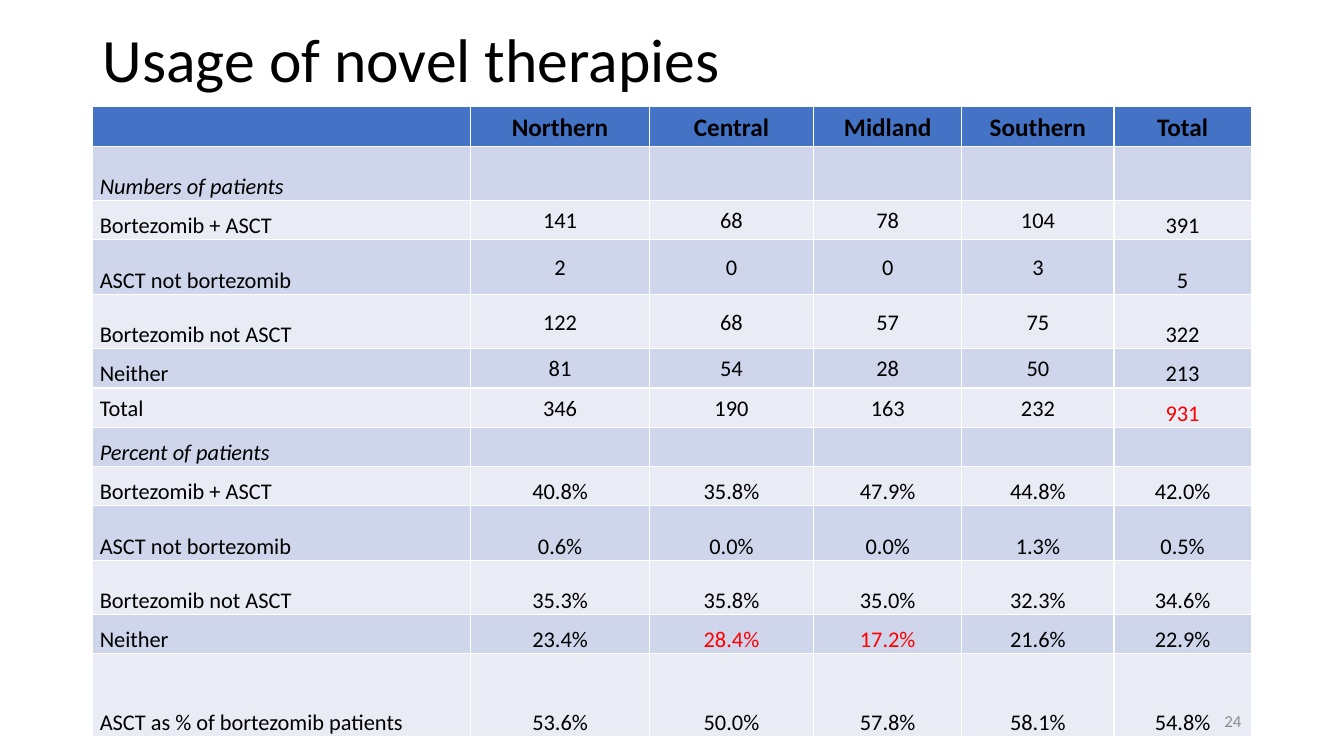
from pptx import Presentation
from pptx.dml.color import RGBColor
from pptx.enum.text import MSO_ANCHOR, MSO_AUTO_SIZE, PP_ALIGN
from pptx.util import Inches, Pt

BLACK = RGBColor(0x00, 0x00, 0x00)
RED = RGBColor(0xFF, 0x00, 0x00)
GREY = RGBColor(0x8C, 0x8C, 0x8C)
HEADER_BLUE = RGBColor(0x44, 0x72, 0xC4)
BAND_DARK = RGBColor(0xCF, 0xD5, 0xEA)
BAND_LIGHT = RGBColor(0xE9, 0xEB, 0xF5)

FONT = "Calibri"
PAGE_WIDTH, PAGE_HEIGHT = 13.33, 7.5
MARGIN = 0.92
CONTENT_WIDTH = PAGE_WIDTH - 2 * MARGIN

# Table grid: column widths and the three row heights
COLUMNS = [3.75, 1.77, 1.63, 1.47, 1.51, 1.36]
SHORT, MEDIUM, TALL = 0.39, 0.54, 0.82

REGIONS = ["", "Northern", "Central", "Midland", "Southern", "Total"]
ROWS = [
    (SHORT, REGIONS),
    (MEDIUM, ["Numbers of patients"]),
    (SHORT, ["Bortezomib + ASCT", "141", "68", "78", "104", "391"]),
    (MEDIUM, ["ASCT not bortezomib", "2", "0", "0", "3", "5"]),
    (MEDIUM, ["Bortezomib not ASCT", "122", "68", "57", "75", "322"]),
    (SHORT, ["Neither", "81", "54", "28", "50", "213"]),
    (SHORT, ["Total", "346", "190", "163", "232", "931"]),
    (SHORT, ["Percent of patients"]),
    (SHORT, ["Bortezomib + ASCT", "40.8%", "35.8%", "47.9%", "44.8%", "42.0%"]),
    (MEDIUM, ["ASCT not bortezomib", "0.6%", "0.0%", "0.0%", "1.3%", "0.5%"]),
    (MEDIUM, ["Bortezomib not ASCT", "35.3%", "35.8%", "35.0%", "32.3%", "34.6%"]),
    (SHORT, ["Neither", "23.4%", "28.4%", "17.2%", "21.6%", "22.9%"]),
    (TALL, ["ASCT as % of bortezomib patients",
            "53.6%", "50.0%", "57.8%", "58.1%", "54.8%"]),
]
HIGHLIGHTS = {"931", "28.4%", "17.2%"}


def write_text(frame, text, size, color=BLACK, bold=False, italic=False,
               align=PP_ALIGN.LEFT, line_spacing=1.0, gap=0):
    """Put one formatted paragraph into a text frame."""
    para = frame.paragraphs[0]
    para.alignment = align
    para.line_spacing = line_spacing
    para.space_before = para.space_after = Pt(gap)
    span = para.add_run()
    span.text = text
    font = span.font
    font.name, font.size, font.color.rgb = FONT, Pt(size), color
    font.bold, font.italic = bold, italic


def place(shape, left, top, width, height):
    shape.left, shape.top = Inches(left), Inches(top)
    shape.width, shape.height = Inches(width), Inches(height)


def add_title(page, text):
    title = page.shapes.title
    place(title, MARGIN, 0.08, CONTENT_WIDTH, 1.08)
    frame = title.text_frame
    frame.vertical_anchor = MSO_ANCHOR.MIDDLE
    frame.auto_size = MSO_AUTO_SIZE.NONE
    write_text(frame, text, 44, line_spacing=0.9)


def cell_anchor(values, column):
    """Headings and regional counts sit mid-cell, all else at the bottom."""
    is_count = 1 <= column <= 4 and not values[column].endswith("%")
    is_total_label = column == 0 and values[0] == "Total"
    if values is REGIONS or is_count or is_total_label:
        return MSO_ANCHOR.MIDDLE
    return MSO_ANCHOR.BOTTOM


def fill_cell(cell, row, column, values):
    header = row == 0
    cell.fill.solid()
    cell.fill.fore_color.rgb = (
        HEADER_BLUE if header else BAND_DARK if row % 2 else BAND_LIGHT)
    cell.margin_left = cell.margin_right = Inches(0.07)
    cell.margin_top = cell.margin_bottom = 0
    if column >= len(values) or not values[column]:
        return
    text = values[column]
    cell.vertical_anchor = cell_anchor(values, column)
    write_text(cell.text_frame, text, 18 if header else 16,
               color=RED if text in HIGHLIGHTS else BLACK,
               bold=header, italic=len(values) == 1,
               align=PP_ALIGN.CENTER if column else PP_ALIGN.LEFT,
               line_spacing=1.07, gap=2)


def add_therapy_table(page):
    height = sum(row_height for row_height, _ in ROWS)
    table = page.shapes.add_table(
        len(ROWS), len(COLUMNS), Inches(MARGIN), Inches(1.06),
        Inches(CONTENT_WIDTH), Inches(height)).table
    for column, width in enumerate(COLUMNS):
        table.columns[column].width = Inches(width)
    for row, (row_height, values) in enumerate(ROWS):
        table.rows[row].height = Inches(row_height)
        for column in range(len(COLUMNS)):
            fill_cell(table.cell(row, column), row, column, values)


def add_page_number(page, number):
    width = 3
    box = page.shapes.add_textbox(0, 0, 0, 0)
    place(box, PAGE_WIDTH - MARGIN - width, 6.95, width, 0.4)
    frame = box.text_frame
    frame.word_wrap = True
    frame.vertical_anchor = MSO_ANCHOR.MIDDLE
    write_text(frame, number, 12, color=GREY, align=PP_ALIGN.RIGHT)


def main():
    deck = Presentation()
    deck.slide_width, deck.slide_height = Inches(PAGE_WIDTH), Inches(PAGE_HEIGHT)
    page = deck.slides.add_slide(deck.slide_layouts.get_by_name("Title Only"))
    add_title(page, "Usage of novel therapies")
    add_therapy_table(page)
    add_page_number(page, "24")
    deck.save("out.pptx")


if __name__ == "__main__":
    main()
